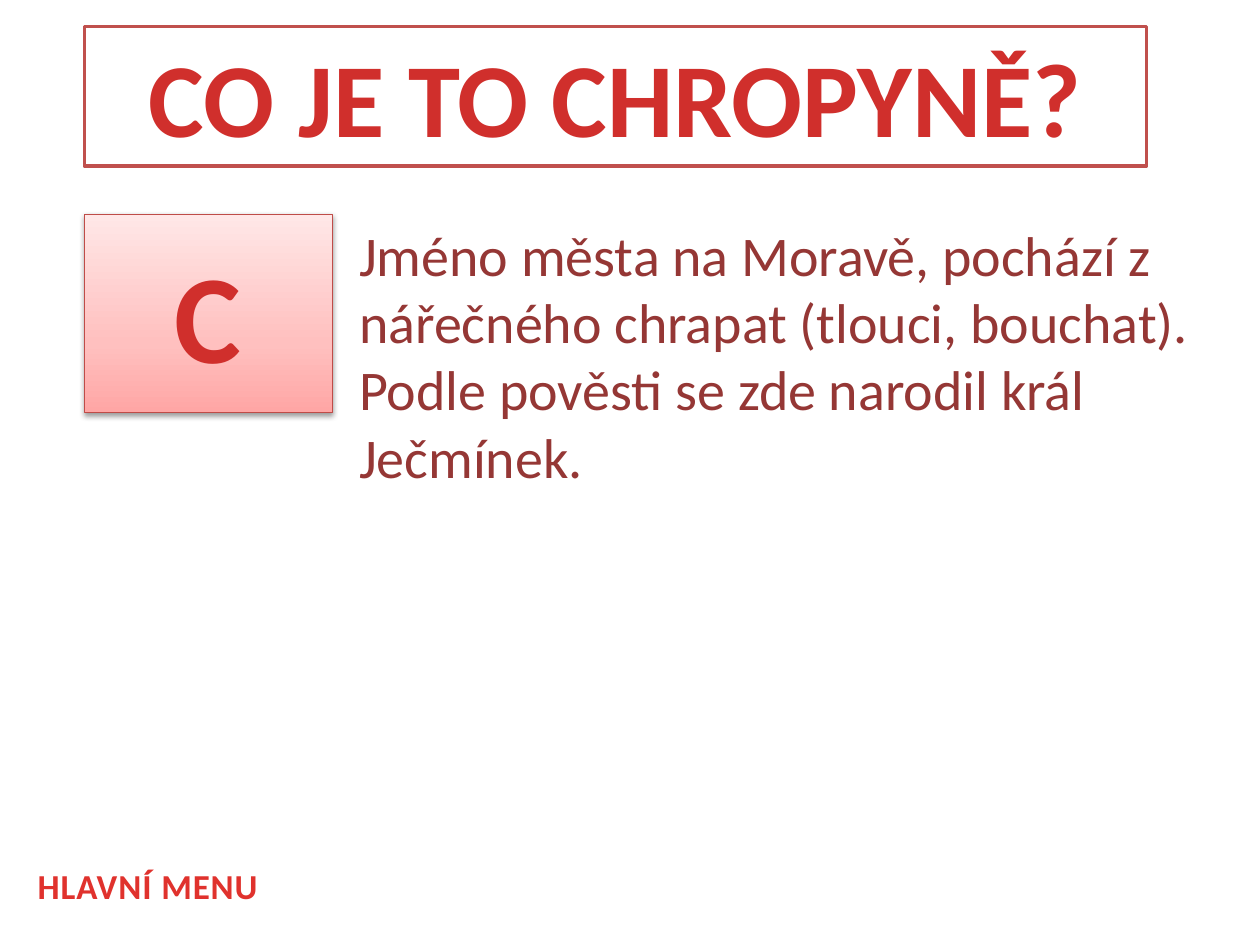
import copy
from dataclasses import dataclass

import pptx
import pptx.dml.color
import pptx.enum.shapes
import pptx.enum.text
import pptx.oxml
import pptx.oxml.ns
import pptx.util
from pptx.util import Cm

RGBColor = pptx.dml.color.RGBColor
Align = pptx.enum.text.PP_ALIGN
Anchor = pptx.enum.text.MSO_ANCHOR

WHITE = RGBColor(0xFF, 0xFF, 0xFF)
BORDER_RED = RGBColor(0xC0, 0x50, 0x4D)
TILE_BORDER = RGBColor(0xBF, 0x4C, 0x48)
HEADING_RED = RGBColor(0xD0, 0x2F, 0x2C)
MENU_RED = RGBColor(0xE0, 0x32, 0x2D)
BODY_RED = RGBColor(0x95, 0x37, 0x35)
TILE_STOPS = (
    (0, RGBColor(0xFF, 0xA6, 0xA5)),
    (0.35, RGBColor(0xFF, 0xC0, 0xBF)),
    (1, RGBColor(0xFF, 0xE7, 0xE7)),
)
TILE_SHADOW = (
    '<a:effectLst xmlns:a="http://schemas.openxmlformats.org/drawingml/2006/main">'
    '<a:outerShdw blurRad="40000" dist="20000" dir="5400000" rotWithShape="0">'
    '<a:srgbClr val="000000"><a:alpha val="38000"/></a:srgbClr>'
    "</a:outerShdw></a:effectLst>"
)
LEFT, ROW_TOP = Cm(1.7), Cm(4.32)


@dataclass(frozen=True)
class Wording:
    text: str
    size: int
    color: RGBColor
    bold: bool = True
    align: Align = Align.LEFT
    anchor: Anchor = Anchor.TOP


def write(shape, wording: Wording):
    frame = shape.text_frame
    frame.word_wrap = True
    frame.auto_size = pptx.enum.text.MSO_AUTO_SIZE.NONE
    frame.vertical_anchor = wording.anchor
    frame.text = wording.text
    paragraph = frame.paragraphs[0]
    paragraph.alignment = wording.align
    run = paragraph.runs[0]
    run.font.name = "Calibri"
    run.font.size = pptx.util.Pt(wording.size)
    run.font.bold = wording.bold
    run.font.color.rgb = wording.color
    return run


def outline(shape, color: RGBColor, width: float) -> None:
    shape.line.color.rgb = color
    shape.line.width = pptx.util.Pt(width)


def fill_tile(tile) -> None:
    """Give the letter tile its three-stop gradient and soft shadow."""
    tile.fill.gradient()
    tile.fill.gradient_angle = 90
    properties = tile._element.spPr
    first_stop = properties.find(".//" + pptx.oxml.ns.qn("a:gs"))
    first_stop.addnext(copy.deepcopy(first_stop))
    for stop, (position, color) in zip(tile.fill.gradient_stops, TILE_STOPS):
        stop.position = position
        stop.color.rgb = color
    properties.append(pptx.oxml.parse_xml(TILE_SHADOW))


def main() -> None:
    deck = pptx.Presentation()
    deck.slide_width, deck.slide_height = Cm(25.4), Cm(19.05)
    slide = deck.slides.add_slide(deck.slide_layouts[5])

    title = slide.shapes.title
    title.left, title.top, title.width, title.height = LEFT, Cm(0.53), Cm(21.41), Cm(2.82)
    title.fill.solid()
    title.fill.fore_color.rgb = WHITE
    outline(title, BORDER_RED, 2)
    write(title, Wording("CO JE TO CHROPYNĚ?", 60, HEADING_RED, align=Align.CENTER))

    letter = slide.shapes.add_shape(
        pptx.enum.shapes.MSO_SHAPE.RECTANGLE, LEFT, ROW_TOP, Cm(5), Cm(4)
    )
    outline(letter, TILE_BORDER, 0.75)
    fill_tile(letter)
    write(letter, Wording("C", 72, HEADING_RED, align=Align.CENTER, anchor=Anchor.MIDDLE))

    explanation = slide.shapes.add_textbox(Cm(6.99), ROW_TOP, Cm(17.81), Cm(5.74))
    write(explanation, Wording(
        "Jméno města na Moravě, pochází z nářečného chrapat (tlouci, bouchat). "
        "Podle pověsti se zde narodil král Ječmínek.",
        32, BODY_RED, bold=False,
    ))

    menu = slide.shapes.add_textbox(Cm(0.51), Cm(17.3), Cm(7.29), Cm(1.12))
    menu_run = write(menu, Wording("HLAVNÍ MENU", 20, MENU_RED))
    menu_run.font._element.set("spc", "50")

    deck.save("out.pptx")


if __name__ == "__main__":
    main()
